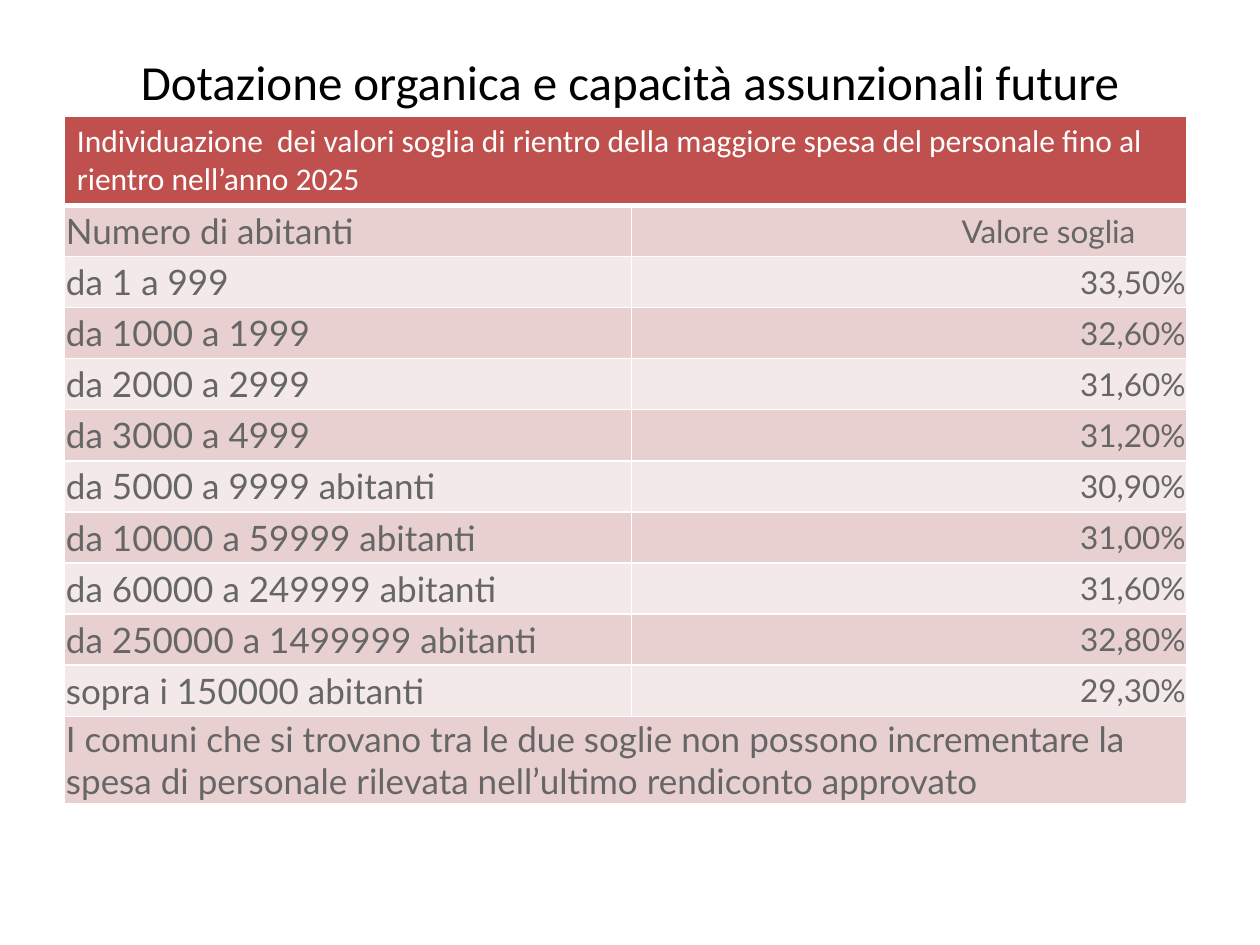
from dataclasses import dataclass

from lxml.etree import SubElement
from pptx import Presentation
from pptx.dml.color import RGBColor
from pptx.enum.text import MSO_ANCHOR, PP_ALIGN
from pptx.oxml.ns import qn
from pptx.util import Cm, Pt

COLORS = {
    "title": "000000",
    "header": "C0504D",
    "dark": "E8D0D0",
    "light": "F4E9E9",
    "body": "666666",
    "white": "FFFFFF",
}


@dataclass
class CellStyle:
    fill: str
    color: str = "body"
    font: str = "Lato"
    size: int = 20
    align: PP_ALIGN = PP_ALIGN.LEFT
    anchor: MSO_ANCHOR = MSO_ANCHOR.MIDDLE
    margin_x: float = 0.03
    margin_y: float = 0.03
    margin_right: float = 0.03
    bottom: int = 1


@dataclass
class Threshold:
    population: str
    value: str


THRESHOLDS = [
    Threshold("Numero di abitanti", "Valore soglia"),
    Threshold("da 1 a 999", "33,50%"),
    Threshold("da 1000 a 1999", "32,60%"),
    Threshold("da 2000 a 2999", "31,60%"),
    Threshold("da 3000 a 4999", "31,20%"),
    Threshold("da 5000 a 9999 abitanti", "30,90%"),
    Threshold("da 10000 a 59999 abitanti", "31,00%"),
    Threshold("da 60000 a 249999 abitanti", "31,60%"),
    Threshold("da 250000 a 1499999 abitanti", "32,80%"),
    Threshold("sopra i 150000 abitanti", "29,30%"),
]


def add_text(tf, text: str, font: str, size: int, color: str, align: PP_ALIGN) -> None:
    p = tf.paragraphs[0]
    p.alignment = align
    r = p.add_run()
    r.text = text
    r.font.name = font
    r.font.size = Pt(size)
    r.font.bold = False
    r.font.color.rgb = RGBColor.from_string(COLORS[color])


def style_cell(cell, style: CellStyle) -> None:
    tcPr = cell._tc.get_or_add_tcPr()
    for side, width in (("L", 1), ("R", 1), ("T", 1), ("B", style.bottom)):
        ln = SubElement(tcPr, qn(f"a:ln{side}"), w=str(Pt(width)))
        fill = SubElement(ln, qn("a:solidFill"))
        SubElement(fill, qn("a:srgbClr"), val=COLORS["white"])
    cell.fill.solid()
    cell.fill.fore_color.rgb = RGBColor.from_string(COLORS[style.fill])
    cell.vertical_anchor = style.anchor
    cell.margin_left = Cm(style.margin_x)
    cell.margin_right = Cm(style.margin_right)
    cell.margin_top = cell.margin_bottom = Cm(style.margin_y)


def fill_cell(cell, text: str, style: CellStyle) -> None:
    style_cell(cell, style)
    add_text(cell.text_frame, text, style.font, style.size, style.color, style.align)


def fill_wide_row(table, row: int, text: str, style: CellStyle) -> None:
    first, last = table.cell(row, 0), table.cell(row, 1)
    first.merge(last)
    fill_cell(first, text, style)
    style_cell(last, style)


def add_title(s, text: str) -> None:
    sp = s.shapes.add_textbox(Cm(1.27), Cm(0.76), Cm(22.86), Cm(1.75))
    tf = sp.text_frame
    tf.word_wrap = True
    tf.vertical_anchor = MSO_ANCHOR.MIDDLE
    add_text(tf, text, "Calibri", 28, "title", PP_ALIGN.CENTER)


def add_threshold_table(s) -> None:
    heights = [1.8] + [1.03] * len(THRESHOLDS) + [1.74]
    widths = [11.43, 11.2]
    table = s.shapes.add_table(
        len(heights), len(widths), Cm(1.3), Cm(2.34), Cm(sum(widths)), Cm(sum(heights))
    ).table
    for column, width in zip(table.columns, widths):
        column.width = Cm(width)
    for row, height in zip(table.rows, heights):
        row.height = Cm(height)

    header = CellStyle("header", "white", "Calibri", 18, anchor=MSO_ANCHOR.TOP,
                       margin_x=0.25, margin_y=0.13, margin_right=0.25, bottom=3)
    fill_wide_row(
        table, 0,
        "Individuazione  dei valori soglia di rientro della maggiore spesa del personale "
        "fino al rientro nell’anno 2025",
        header,
    )
    for i, threshold in enumerate(THRESHOLDS, start=1):
        band = "dark" if i % 2 else "light"
        margin_right = 1.04 if i == 1 else 0.03
        fill_cell(table.cell(i, 0), threshold.population, CellStyle(band))
        fill_cell(table.cell(i, 1), threshold.value,
                  CellStyle(band, size=18, align=PP_ALIGN.RIGHT, margin_right=margin_right))
    fill_wide_row(
        table, len(heights) - 1,
        "I comuni che si trovano tra le due soglie non possono incrementare la spesa "
        "di personale rilevata nell’ultimo rendiconto approvato",
        CellStyle("dark"),
    )


def main() -> None:
    prs = Presentation()
    prs.slide_width, prs.slide_height = Cm(25.4), Cm(19.05)
    s = prs.slides.add_slide(prs.slide_layouts[6])
    add_title(s, "Dotazione organica e capacità assunzionali future")
    add_threshold_table(s)
    prs.save("out.pptx")


if __name__ == "__main__":
    main()
